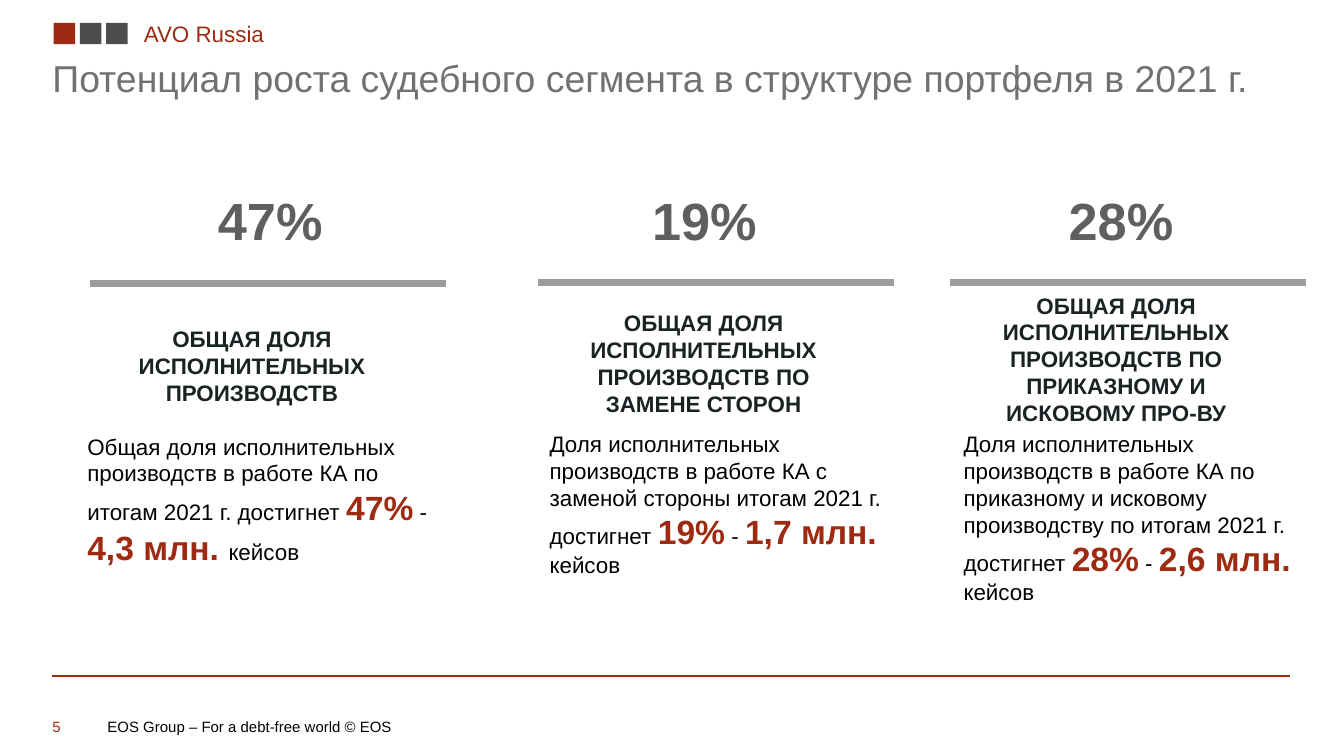
from dataclasses import dataclass

from lxml.etree import SubElement
from pptx import Presentation
from pptx.dml.color import RGBColor
from pptx.enum.shapes import MSO_CONNECTOR, MSO_SHAPE
from pptx.enum.text import MSO_ANCHOR, PP_ALIGN
from pptx.oxml.ns import qn
from pptx.util import Inches, Pt


@dataclass(frozen=True)
class Theme:
    font: str = "Arial"
    red: str = "9E2B11"
    dark: str = "4D4D4C"
    title: str = "717170"
    figure: str = "605E60"
    heading: str = "1A2224"
    body: str = "000000"
    rule: str = "9D9D9D"
    title_size: int = 20
    figure_size: int = 28
    accent_size: int = 18
    body_size: int = 12
    footer_size: int = 8


@dataclass
class SlideBuilder:
    theme: Theme
    slide: object

    def square(self, left, top, size, color):
        mark = self.slide.shapes.add_shape(
            MSO_SHAPE.RECTANGLE, Inches(left), Inches(top), Inches(size), Inches(size))
        mark.shadow.inherit = False
        mark.fill.solid()
        mark.fill.fore_color.rgb = RGBColor.from_string(color)
        mark.line.fill.background()

    def rule(self, left, right, y, color, width):
        line = self.slide.shapes.add_connector(
            MSO_CONNECTOR.STRAIGHT, Inches(left), Inches(y), Inches(right), Inches(y))
        line.line.color.rgb = RGBColor.from_string(color)
        line.line.width = Pt(width)
        SubElement(line._element.spPr, qn("a:effectLst"))

    def text(self, left, top, width, height, runs, inset=0.0,
             anchor=MSO_ANCHOR.TOP, align=PP_ALIGN.LEFT, spacing=None):
        """Each run is (words, size, color, bold)."""
        box = self.slide.shapes.add_textbox(
            Inches(left), Inches(top), Inches(width), Inches(height))
        frame = box.text_frame
        frame.word_wrap = True
        frame.vertical_anchor = anchor
        frame.margin_left = frame.margin_right = Inches(inset)
        frame.margin_top = frame.margin_bottom = Inches(inset)
        paragraph = frame.paragraphs[0]
        paragraph.alignment = align
        if spacing:
            paragraph.line_spacing = spacing
        for words, size, color, bold in runs:
            run = paragraph.add_run()
            run.text = words
            run.font.name = self.theme.font
            run.font.size = Pt(size)
            run.font.bold = bold
            run.font.color.rgb = RGBColor.from_string(color)

    def centered(self, left, top, width, height, words, size, color, spacing=None):
        self.text(left, top, width, height, [(words, size, color, True)], 0.06,
                  MSO_ANCHOR.MIDDLE, PP_ALIGN.CENTER, spacing)

    def statement(self, left, top, height, intro, share, cases):
        theme = self.theme
        plain = (theme.body_size, theme.body, False)
        accent = (theme.accent_size, theme.red, True)
        self.text(left, top, 2.7, height, [
            (intro, *plain), (share, *accent), (" - ", *plain),
            (cases, *accent), ("кейсов", *plain)], 0.06)


@dataclass(frozen=True)
class Segment:
    share: str
    cases: str
    heading: str
    intro: str
    share_left: float
    rule_left: float
    rule_y: float
    heading_at: tuple  # left, top, height
    intro_at: tuple  # left, top, height


SEGMENTS = [
    Segment("47%", "4,3 млн. ", "ОБЩАЯ ДОЛЯ ИСПОЛНИТЕЛЬНЫХ ПРОИЗВОДСТВ",
            "Общая доля исполнительных производств в работе КА "
            "по итогам 2021 г. достигнет ",
            0.75, 0.67, 2.11, (0.93, 2.36, 0.72), (0.59, 3.16, 1.09)),
    Segment("19%", "1,7 млн. ",
            "ОБЩАЯ ДОЛЯ ИСПОЛНИТЕЛЬНЫХ ПРОИЗВОДСТВ ПО ЗАМЕНЕ СТОРОН",
            "Доля исполнительных производств в работе КА "
            "с заменой стороны итогам 2021 г. достигнет ",
            3.98, 4.0, 2.1, (4.29, 2.24, 0.92), (4.03, 3.14, 1.24)),
    Segment("28%", "2,6 млн. ",
            "ОБЩАЯ ДОЛЯ ИСПОЛНИТЕЛЬНЫХ ПРОИЗВОДСТВ ПО ПРИКАЗНОМУ И ИСКОВОМУ ПРО-ВУ",
            "Доля исполнительных производств в работе КА по приказному "
            "и исковому производству по итогам 2021 г. достигнет ",
            7.08, 7.07, 2.1, (7.36, 2.11, 1.12), (7.11, 3.14, 1.48)),
]


def main():
    # Widescreen page, 16 to 9
    deck = Presentation()
    deck.slide_width = Inches(10)
    deck.slide_height = Inches(10 * 9 / 16)
    theme = Theme()
    page = SlideBuilder(theme, deck.slides.add_slide(deck.slide_layouts[6]))

    # Footer rule
    page.rule(0.39, 9.6, 5.03, theme.red, 0.75)

    # Header: three squares, section name and title
    for index, color in enumerate((theme.red, theme.dark, theme.dark)):
        page.square(0.4 + index * 0.39 / 2, 0.17, 0.16, color)
    page.text(1.07, 0.15, 1.28, 0.2, [("AVO Russia", theme.body_size, theme.red, False)])
    page.text(0.39, 0.41, 9.21, 0.34, [
        ("Потенциал роста судебного сегмента в структуре портфеля в 2021 г.",
         theme.title_size, theme.title, False)])

    # Footer: copyright line and page number
    for left, width, words, color in (
            (0.8, 7.87, "EOS Group – For a debt-free world © EOS", theme.body),
            (0.39, 0.41, "5", theme.red)):
        page.text(left, 5.34, width, 0.13, [(words, theme.footer_size, color, False)],
                  anchor=MSO_ANCHOR.MIDDLE)

    # Three segments: share, rule, heading and statement
    for segment in SEGMENTS:
        page.centered(segment.share_left, 1.43, 2.52, 0.49, segment.share,
                      theme.figure_size, theme.figure, 0.8)
        page.rule(segment.rule_left, segment.rule_left + 2.65, segment.rule_y,
                  theme.rule, 4)
        left, top, height = segment.heading_at
        page.centered(left, top, 1.89, height, segment.heading,
                      theme.body_size, theme.heading)
        page.statement(*segment.intro_at, segment.intro, segment.share, segment.cases)

    deck.save("out.pptx")


if __name__ == "__main__":
    main()
